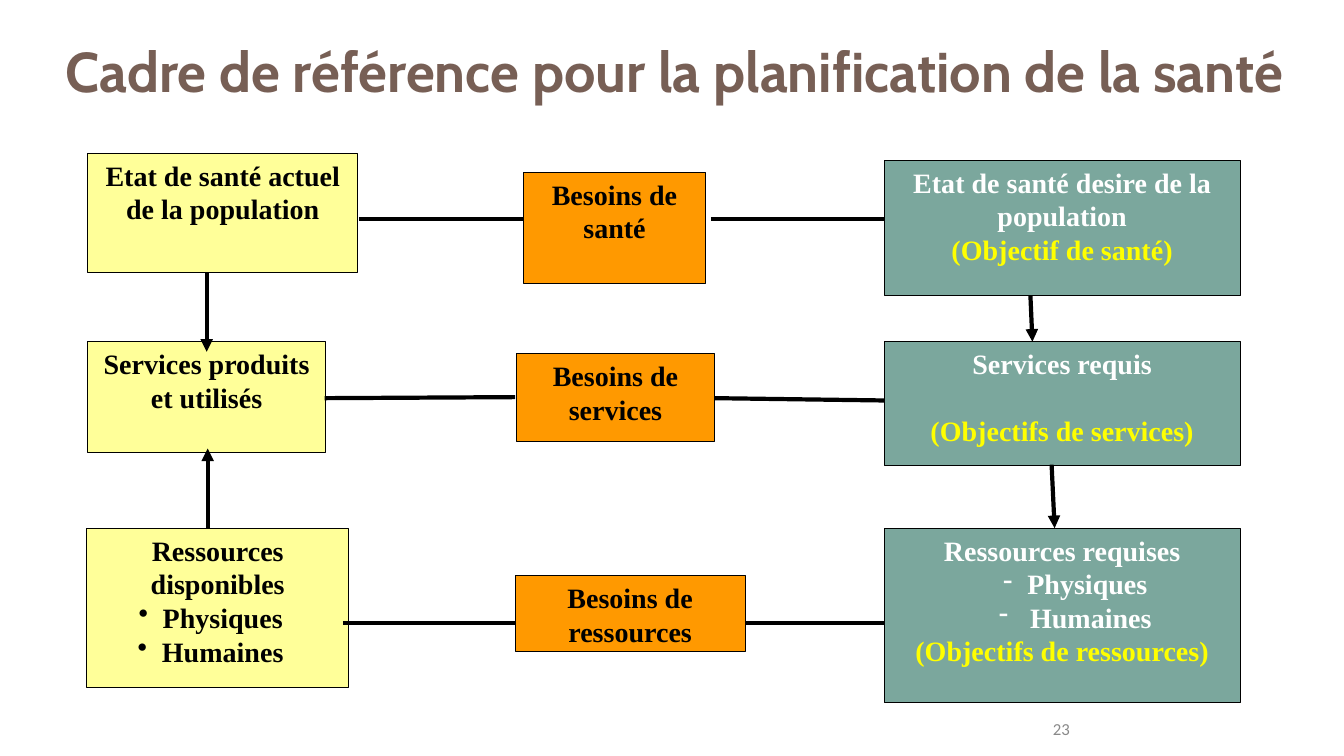
from lxml import etree
from pptx import Presentation
from pptx.dml.color import RGBColor
from pptx.enum.shapes import MSO_CONNECTOR, MSO_SHAPE
from pptx.enum.text import MSO_ANCHOR, PP_ALIGN
from pptx.oxml.ns import qn
from pptx.util import Inches, Pt

RECTANGLE = MSO_SHAPE.RECTANGLE
STRAIGHT = MSO_CONNECTOR.STRAIGHT
TOP, MIDDLE = MSO_ANCHOR.TOP, MSO_ANCHOR.MIDDLE
LEFT, CENTER, RIGHT = PP_ALIGN.LEFT, PP_ALIGN.CENTER, PP_ALIGN.RIGHT
COLORS = {
    "title": "775F55", "number": "898989", "black": "000000", "white": "FFFFFF",
    "current": "FFFF99", "needs": "FF9900", "required": "7BA79D", "goal": "FFFF00",
}

deck = Presentation()
deck.slide_width, deck.slide_height = Inches(13.33), Inches(7.5)
slide = deck.slides.add_slide(deck.slide_layouts[5])


def write(paragraph, text, color, size=20, font="Times New Roman", bold=True, align=CENTER):
    paragraph.alignment = align
    run = paragraph.add_run()
    run.text = text
    run.font.name, run.font.size, run.font.bold = font, Pt(size), bold
    run.font.color.rgb = RGBColor.from_string(COLORS[color])


def link(x1, y1, x2, y2, arrow=False):
    line = slide.shapes.add_connector(STRAIGHT, Inches(x1), Inches(y1), Inches(x2), Inches(y2))
    line.line.width = Pt(3)
    line.line.color.rgb = RGBColor.from_string(COLORS["black"])
    if arrow:
        etree.SubElement(line.line._get_or_add_ln(), qn("a:tailEnd"), type="triangle")
    etree.SubElement(line._element.spPr, qn("a:effectLst"))


link(7.09, 3.95, 9.28, 3.98)
link(7.39, 6.18, 9.05, 6.18)

title = slide.shapes.title
title.left, title.top, title.width, title.height = map(Inches, (0.55, 0.31, 12.43, 1.09))
title.text_frame.vertical_anchor = TOP
title.text_frame.word_wrap = True
write(title.text_frame.paragraphs[0], "Cadre de référence pour la planification de la santé",
      "title", 40, "Cabin", align=LEFT)

page_number = slide.shapes.add_textbox(Inches(8.38), Inches(6.98), Inches(2.33), Inches(0.5))
page_number.text_frame.word_wrap = True
page_number.text_frame.vertical_anchor = MIDDLE
write(page_number.text_frame.paragraphs[0], "23", "number", 12, "Calibri", False, RIGHT)

STAGES = [
    ("current", 0.87, 1.52, 2.68, 1.18, ["Etat de santé actuel de la population"], None),
    ("needs", 5.19, 1.71, 1.81, 1.1, ["Besoins de santé"], None),
    ("required", 8.77, 1.59, 3.53, 1.34,
     ["Etat de santé desire de la population"], "(Objectif de santé)"),
    ("current", 0.87, 3.39, 2.36, 1.1, ["Services produits et utilisés"], None),
    ("needs", 5.12, 3.51, 1.97, 0.87, ["Besoins de services"], None),
    ("required", 8.77, 3.39, 3.53, 1.23, ["Services requis"], "(Objectifs de services)"),
    ("current", 0.86, 5.24, 2.6, 1.58,
     ["Ressources disponibles", "Physiques", "Humaines"], None),
    ("needs", 5.11, 5.71, 2.28, 0.75, ["Besoins de ressources"], None),
    ("required", 8.77, 5.24, 3.53, 1.73,
     ["Ressources requises", "Physiques", " Humaines"], "(Objectifs de ressources)"),
]
BULLETS = {"current": ("•", 0.1), "required": ("-", 0.5)}

for kind, left, top, width, height, lines, goal in STAGES:
    box = slide.shapes.add_shape(RECTANGLE, Inches(left), Inches(top), Inches(width), Inches(height))
    box.shadow.inherit = False
    box.fill.solid()
    box.fill.fore_color.rgb = RGBColor.from_string(COLORS[kind])
    box.line.color.rgb = RGBColor.from_string(COLORS["black"])
    box.line.width = Pt(0.75)
    frame = box.text_frame
    frame.word_wrap = True
    frame.vertical_anchor = TOP
    for index, text in enumerate(lines):
        paragraph = frame.add_paragraph() if index else frame.paragraphs[0]
        write(paragraph, text, "white" if kind == "required" else "black")
        if index:
            mark, margin = BULLETS[kind]
            properties = paragraph._p.get_or_add_pPr()
            properties.set("marL", str(Inches(margin)))
            properties.set("indent", str(Inches(-0.24)))
            etree.SubElement(properties, qn("a:buChar"), char=mark)
    if goal:
        paragraph = frame.add_paragraph()
        write(paragraph, goal, "goal")
        if lines == ["Services requis"]:
            paragraph.space_before = Pt(24)

for ends in [(3.56, 2.17, 5.19, 2.17), (7.05, 2.17, 8.77, 2.17),
             (3.22, 3.95, 5.11, 3.94), (3.4, 6.18, 5.11, 6.18)]:
    link(*ends)
for ends in [(10.22, 2.93, 10.24, 3.39), (10.43, 4.61, 10.46, 5.24),
             (2.06, 5.24, 2.06, 4.45), (2.05, 2.7, 2.05, 3.49)]:
    link(*ends, arrow=True)

deck.save("out.pptx")
